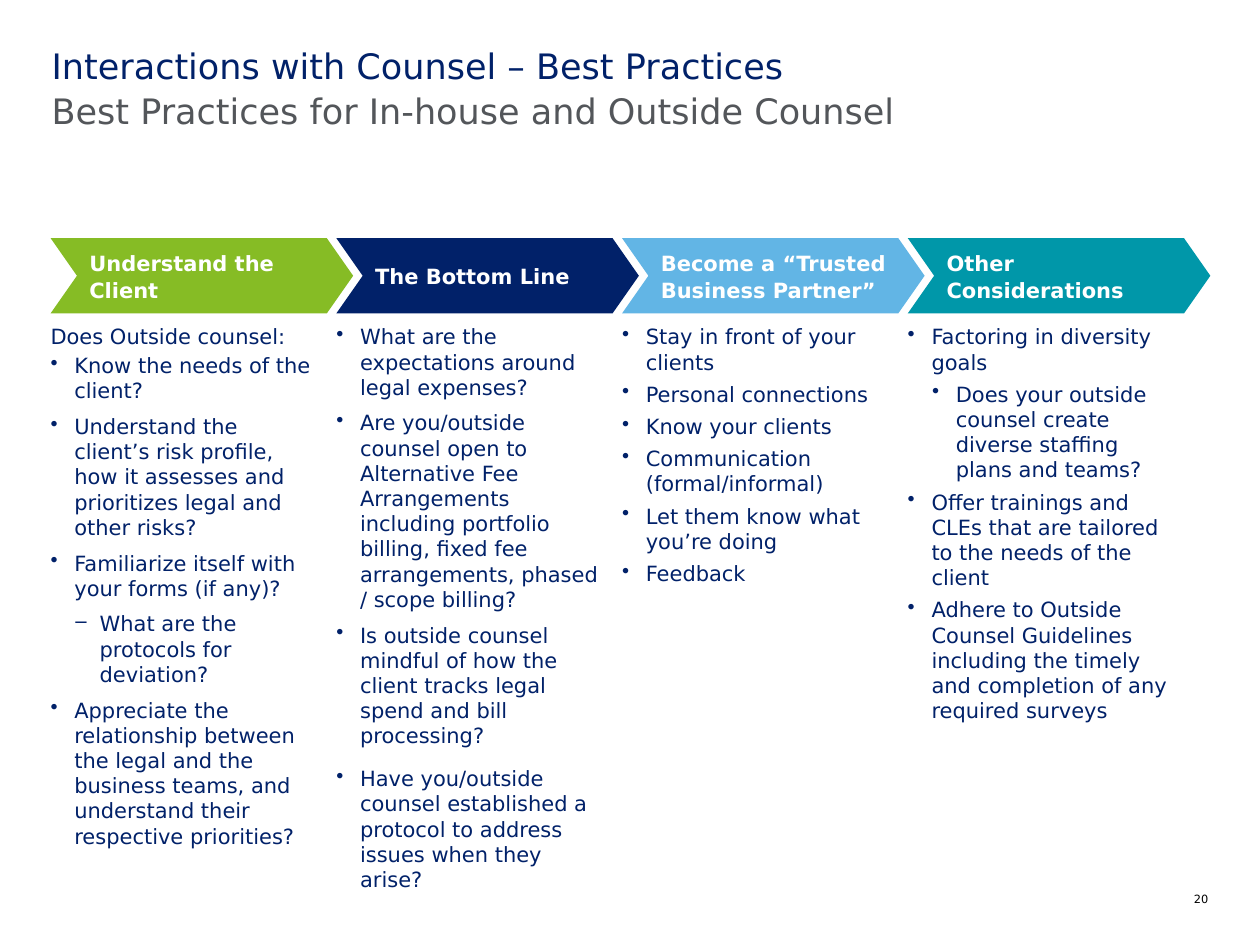
from dataclasses import dataclass

from lxml.etree import SubElement
from pptx import Presentation
from pptx.dml.color import RGBColor
from pptx.enum.shapes import MSO_SHAPE
from pptx.enum.text import MSO_ANCHOR, MSO_AUTO_SIZE, PP_ALIGN
from pptx.oxml.ns import qn
from pptx.util import Cm, Pt

FONT = "DejaVu Sans"
NAVY = RGBColor(0x01, 0x21, 0x69)
GREEN = RGBColor(0x86, 0xBC, 0x25)
SKY = RGBColor(0x62, 0xB5, 0xE5)
TEAL = RGBColor(0x00, 0x97, 0xA9)
GRAY = RGBColor(0x53, 0x56, 0x5A)
WHITE = RGBColor(0xFF, 0xFF, 0xFF)
BLACK = RGBColor(0x00, 0x00, 0x00)

LEFT = 1.02
PITCH = 5.76
HEADER_TOP, HEADER_WIDTH, HEADER_HEIGHT = 4.8, 6.1, 1.52
BODY_TOP, BODY_WIDTH, BODY_HEIGHT = 6.53, 5.33, 3.25


@dataclass(frozen=True)
class Point:
    text: str
    level: int = 0
    bullet: str = "•"
    indent: float = 0.48
    hanging: float = 0.48
    before: float = 0
    after: float = 0


@dataclass(frozen=True)
class Practice:
    heading: str
    color: RGBColor
    points: list[Point]


def spaced_after(text: str) -> Point:
    return Point(text, after=6)


def spaced_before(text: str) -> Point:
    return Point(text, before=4)


PRACTICES = [
    Practice("Understand the Client", GREEN, [
        Point("Does Outside counsel:", bullet="", indent=0, hanging=0, after=2),
        spaced_after("Know the needs of the client?"),
        spaced_after("Understand the client’s risk profile, how it assesses and "
                     "prioritizes legal and other risks?"),
        spaced_after("Familiarize itself with your forms (if any)?"),
        Point("What are the protocols for deviation?", level=2, bullet="‒",
              indent=0.99, hanging=0.51, after=6),
        spaced_after("Appreciate the relationship between the legal and the business "
                     "teams, and understand their respective priorities?"),
    ]),
    Practice("The Bottom Line", NAVY, [
        spaced_after("What are the expectations around legal expenses?"),
        spaced_after("Are you/outside counsel open to Alternative Fee Arrangements "
                     "including portfolio billing, fixed fee arrangements, phased "
                     "/ scope billing?"),
        spaced_after("Is outside counsel mindful of how the client tracks legal spend "
                     "and bill processing?"),
        spaced_before("Have you/outside counsel established a protocol to address "
                      "issues when they arise?"),
    ]),
    Practice("Become a “Trusted Business Partner”", SKY, [
        Point("Stay in front of your clients"),
        spaced_before("Personal connections"),
        spaced_before("Know your clients"),
        spaced_before("Communication (formal/informal)"),
        spaced_before("Let them know what you’re doing"),
        spaced_before("Feedback"),
    ]),
    Practice("Other Considerations", TEAL, [
        Point("Factoring in diversity goals"),
        Point("Does your outside counsel create diverse staffing plans and teams?",
              level=1, indent=0.97, before=4),
        spaced_before("Offer trainings and CLEs that are tailored to the needs of "
                      "the client"),
        spaced_before("Adhere to Outside Counsel Guidelines including the timely and "
                      "completion of any required surveys"),
    ]),
]


def write_text(paragraph, text: str, *, size: float = 12, color: RGBColor = NAVY,
               bold: bool = False, align: PP_ALIGN = PP_ALIGN.LEFT,
               before: float = 0, after: float = 0, line: float = 1.0) -> None:
    paragraph.alignment = align
    paragraph.space_before = Pt(before)
    paragraph.space_after = Pt(after)
    paragraph.line_spacing = line
    run = paragraph.add_run()
    run.text = text
    run.font.name = FONT
    run.font.size = Pt(size)
    run.font.bold = bold
    run.font.color.rgb = color


def set_frame(frame, margin: float = 0, anchor: MSO_ANCHOR = MSO_ANCHOR.TOP) -> None:
    frame.word_wrap = True
    frame.auto_size = MSO_AUTO_SIZE.NONE
    frame.vertical_anchor = anchor
    frame.margin_left = frame.margin_right = Cm(margin)
    frame.margin_top = frame.margin_bottom = Cm(margin)


def add_text_frame(slide, left: float, top: float, width: float, height: float):
    frame = slide.shapes.add_textbox(Cm(left), Cm(top), Cm(width), Cm(height)).text_frame
    set_frame(frame)
    return frame


def draw_title(slide, text: str) -> None:
    title = slide.shapes.title
    title.left, title.top = Cm(1.04), Cm(0.89)
    title.width, title.height = Cm(23.32), Cm(0.94)
    set_frame(title.text_frame)
    write_text(title.text_frame.paragraphs[0], text, size=20)


def draw_header(slide, practice: Practice, left: float) -> None:
    chevron = slide.shapes.add_shape(MSO_SHAPE.CHEVRON, Cm(left), Cm(HEADER_TOP),
                                     Cm(HEADER_WIDTH), Cm(HEADER_HEIGHT))
    chevron.adjustments[0] = 0.35
    chevron.shadow.inherit = False
    chevron.fill.solid()
    chevron.fill.fore_color.rgb = practice.color
    chevron.line.fill.background()
    set_frame(chevron.text_frame, margin=0.25, anchor=MSO_ANCHOR.MIDDLE)
    write_text(chevron.text_frame.paragraphs[0], practice.heading,
               color=WHITE, bold=True, line=1.06)


def draw_points(slide, points: list[Point], left: float) -> None:
    frame = add_text_frame(slide, left, BODY_TOP, BODY_WIDTH, BODY_HEIGHT)
    for index, point in enumerate(points):
        paragraph = frame.add_paragraph() if index else frame.paragraphs[0]
        paragraph.level = point.level
        write_text(paragraph, point.text, before=point.before, after=point.after)
        if point.bullet:
            properties = paragraph._p.get_or_add_pPr()
            properties.set("marL", str(Cm(point.indent)))
            properties.set("indent", str(-Cm(point.hanging)))
            SubElement(properties, qn("a:buChar"), char=point.bullet)


def main() -> None:
    presentation = Presentation()
    presentation.slide_width, presentation.slide_height = Cm(25.4), Cm(19.05)
    slide = presentation.slides.add_slide(presentation.slide_layouts[5])

    draw_title(slide, "Interactions with Counsel – Best Practices")
    subtitle = add_text_frame(slide, 1.04, 1.8, 23.32, 2.11)
    write_text(subtitle.paragraphs[0], "Best Practices for In-house and Outside Counsel",
               size=20, color=GRAY, after=10)

    for column, practice in enumerate(PRACTICES):
        left = LEFT + column * PITCH
        draw_header(slide, practice, left)
        draw_points(slide, practice.points, left)

    page_number = add_text_frame(slide, 23.72, 17.98, 0.64, 0.28)
    write_text(page_number.paragraphs[0], "20", size=6.5, color=BLACK,
               align=PP_ALIGN.RIGHT)
    presentation.save("out.pptx")


if __name__ == "__main__":
    main()
